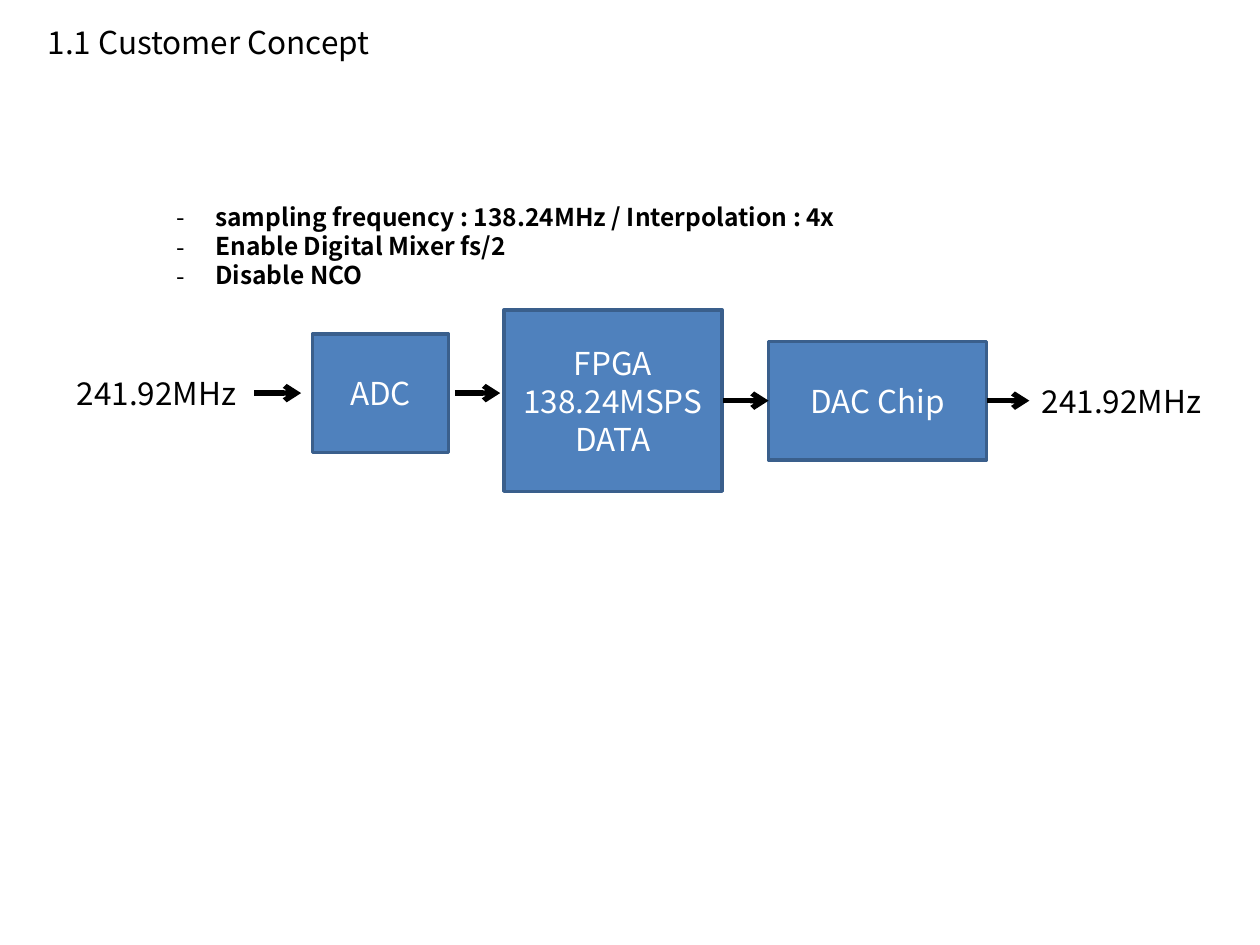
from lxml import etree
from pptx import Presentation
from pptx.dml.color import RGBColor
from pptx.enum.shapes import MSO_CONNECTOR, MSO_SHAPE
from pptx.enum.text import MSO_ANCHOR, MSO_AUTO_SIZE, PP_ALIGN
from pptx.oxml.ns import qn
from pptx.util import Inches, Pt

RECT, STRAIGHT = MSO_SHAPE.RECTANGLE, MSO_CONNECTOR.STRAIGHT
MIDDLE, FIT = MSO_ANCHOR.MIDDLE, MSO_AUTO_SIZE.SHAPE_TO_FIT_TEXT
LEFT, CENTER = PP_ALIGN.LEFT, PP_ALIGN.CENTER
BLACK = RGBColor(0x00, 0x00, 0x00)
WHITE = RGBColor(0xFF, 0xFF, 0xFF)
BLUE = RGBColor(0x4F, 0x81, 0xBD)
EDGE = RGBColor(0x3A, 0x5F, 0x8C)
FONT = "Noto Sans CJK KR"
LINE_HEIGHT = 1.2
BULLET_INDENT = 0.31

INPUT_Y, OUTPUT_Y = 3.12, 3.18  # centre lines of the signal path

# left, width, height, centre y, lines
BLOCKS = [
    (2.48, 1.08, 0.94, INPUT_Y, ["ADC"]),
    (4, 1.73, 1.44, OUTPUT_Y, ["FPGA", "138.24MSPS", "DATA"]),
    (6.1, 1.73, 0.94, OUTPUT_Y, ["DAC Chip"]),
]
# start x, end x, y
ARROWS = [
    (2.02, 2.39, INPUT_Y),
    (3.61, 3.97, INPUT_Y),
    (5.74, 6.1, OUTPUT_Y),
    (7.83, 8.17, OUTPUT_Y),
]
# left, top, width, height, wrap, text
LABELS = [
    (0.28, 0.13, 2.76, 0.4, False, "1.1 Customer Concept"),
    (0.51, INPUT_Y - 0.2, 1.51, 0.4, True, "241.92MHz"),
    (8.17, OUTPUT_Y - 0.2, 1.51, 0.4, True, "241.92MHz"),
]
SETTINGS_BOX = (1.3, 1.55, 7.01, 0.81)
SETTINGS = [
    "sampling frequency : 138.24MHz / Interpolation : 4x",
    "Enable Digital Mixer fs/2",
    "Disable NCO",
]


def write(tf, lines, size=18, color=BLACK, align=LEFT, bold=False):
    font_format = {"name": FONT, "size": Pt(size), "bold": bold}
    for i, line in enumerate(lines):
        p = tf.paragraphs[0] if i == 0 else tf.add_paragraph()
        p.alignment = align
        p.line_spacing = Pt(round(size * LINE_HEIGHT, 1))
        r = p.add_run()
        r.text = line
        for name, value in font_format.items():
            setattr(r.font, name, value)
        r.font.color.rgb = color
        etree.SubElement(r.font._element, qn("a:ea"), typeface=FONT)


def add_text_box(s, box, wrap, lines, **style):
    tf = s.shapes.add_textbox(*map(Inches, box)).text_frame
    tf.word_wrap = wrap
    tf.auto_size = FIT
    write(tf, lines, **style)
    return tf


def add_block(s, left, width, height, center_y, lines):
    box = (left, center_y - height / 2, width, height)
    sp = s.shapes.add_shape(RECT, *map(Inches, box))
    sp.shadow.inherit = False
    sp.fill.solid()
    sp.fill.fore_color.rgb = BLUE
    sp.line.color.rgb = EDGE
    sp.line.width = Pt(2)
    sp.text_frame.vertical_anchor = MIDDLE
    write(sp.text_frame, lines, color=WHITE, align=CENTER)


def add_arrow(s, start, end, y):
    arrow = s.shapes.add_connector(STRAIGHT, *map(Inches, (start, y, end, y)))
    arrow.line.color.rgb = BLACK
    arrow.line.width = Pt(3)
    etree.SubElement(arrow.line._get_or_add_ln(), qn("a:tailEnd"), type="arrow")
    etree.SubElement(arrow._element.spPr, qn("a:effectLst"))


def add_dashes(tf):
    indent = Inches(BULLET_INDENT)
    for p in tf.paragraphs:
        pPr = p._p.get_or_add_pPr()
        pPr.set("marL", str(indent))
        pPr.set("indent", str(-indent))
        etree.SubElement(pPr, qn("a:buFont"), typeface=FONT)
        etree.SubElement(pPr, qn("a:buChar"), char="-")


def main():
    prs = Presentation()
    prs.slide_width, prs.slide_height = Inches(10), Inches(7.5)
    s = prs.slides.add_slide(prs.slide_layouts[6])
    for block in BLOCKS:
        add_block(s, *block)
    for arrow in ARROWS:
        add_arrow(s, *arrow)
    for *box, wrap, text in LABELS:
        add_text_box(s, box, wrap, [text])
    add_dashes(add_text_box(s, SETTINGS_BOX, True, SETTINGS, size=14, bold=True))
    prs.save("out.pptx")


if __name__ == "__main__":
    main()
